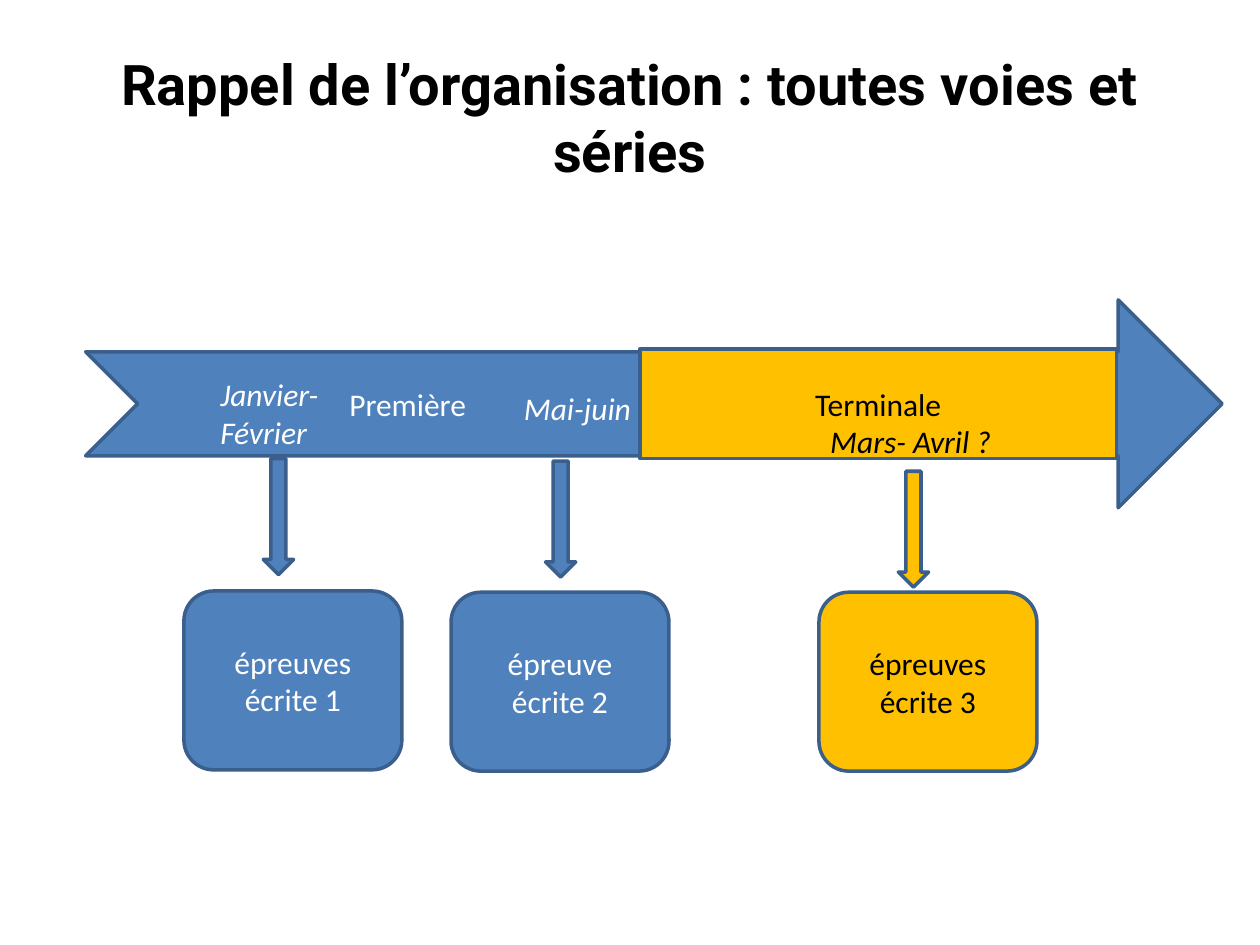
import pptx
import pptx.dml.color
import pptx.enum.shapes
import pptx.enum.text
import pptx.util
from pptx.util import Inches

SHAPES = pptx.enum.shapes.MSO_SHAPE
ALIGN = pptx.enum.text.PP_ALIGN
ANCHOR = pptx.enum.text.MSO_ANCHOR
BLUE, AMBER, OUTLINE = "4F81BD", "FFC000", "3A5F8C"
TEXT_ON = {BLUE: "FFFFFF", AMBER: "000000"}


def color(value):
    return pptx.dml.color.RGBColor.from_string(value)


def write(shape, text, text_color, align=ALIGN.LEFT, **formats):
    frame = shape.text_frame
    frame.word_wrap = True
    paragraph = frame.paragraphs[0]
    paragraph.alignment = align
    run = paragraph.add_run()
    run.text = text
    run.font.color.rgb = color(text_color)
    formats = {"name": "Calibri", "size": pptx.util.Pt(18), **formats}
    for name, value in formats.items():
        setattr(run.font, name, value)


def add_block(slide, kind, box, fill, text="", align=ALIGN.CENTER):
    shape = slide.shapes.add_shape(kind, *map(Inches, box))
    shape.shadow.inherit = False
    shape.fill.solid()
    shape.fill.fore_color.rgb = color(fill)
    shape.line.color.rgb = color(OUTLINE)
    shape.line.width = pptx.util.Pt(2)
    shape.text_frame.vertical_anchor = ANCHOR.MIDDLE
    if text:
        write(shape, text, TEXT_ON[fill], align)
    return shape


def add_title(slide, box, text):
    title = slide.shapes.title
    for name, value in zip(("left", "top", "width", "height"), box):
        setattr(title, name, Inches(value))
    title.text_frame.vertical_anchor = ANCHOR.MIDDLE
    write(title, text, "000000", ALIGN.CENTER,
          name="Roboto", size=pptx.util.Pt(32), bold=True)


def add_timeline(slide, box):
    left, top, width, height = box
    # Whole school path, with the first year named on its left part
    arrow = add_block(slide, SHAPES.NOTCHED_RIGHT_ARROW, box, BLUE,
                      "Première", ALIGN.LEFT)
    arrow.text_frame.margin_left = Inches(1.68)
    # Final year, laid over the arrow's shaft
    add_block(slide, SHAPES.RECTANGLE,
              (left + 4.4, top + 0.39, 3.78, 0.87), AMBER, "Terminale")


def add_exam(slide, box, fill, text, arrow_offset, date, date_box):
    left, top, width, height = box
    add_block(slide, SHAPES.ROUNDED_RECTANGLE, box, fill, text)
    # Arrow from the timeline down to the exam
    dx, dy = arrow_offset
    add_block(slide, SHAPES.DOWN_ARROW,
              (left + dx, top + dy, 0.24, 0.92), fill)
    # Date on the timeline
    dx, dy, date_width, date_height = date_box
    label = slide.shapes.add_textbox(
        *map(Inches, (left + dx, top + dy, date_width, date_height)))
    write(label, date, TEXT_ON[fill], italic=True)


def main():
    presentation = pptx.Presentation()
    presentation.slide_width, presentation.slide_height = Inches(10), Inches(7.5)
    slide = presentation.slides.add_slide(presentation.slide_layouts[5])

    add_title(slide, (0.5, 0.3, 9, 1.25),
              "Rappel de l’organisation : toutes voies et séries")
    add_timeline(slide, (0.68, 2.38, 9.02, 1.65))

    # Exam: left, top, fill, text, arrow offset, date, date box offset and size
    exams = [
        (1.46, 4.69, BLUE, "épreuves écrite 1", (0.63, -1.05),
         "Janvier-Février", (0.19, -1.76, 1.1, 0.71)),
        (3.58, 4.7, BLUE, "épreuve écrite 2", (0.75, -1.04),
         "Mai-juin", (0.48, -1.66, 1.1, 0.4)),
        (6.5, 4.7, AMBER, "épreuves écrite 3", (0.63, -0.96),
         "Mars- Avril ?", (-0.01, -1.4, 1.52, 0.4)),
    ]
    for left, top, *details in exams:
        add_exam(slide, (left, top, 1.73, 1.42), *details)

    presentation.save("out.pptx")


if __name__ == "__main__":
    main()
